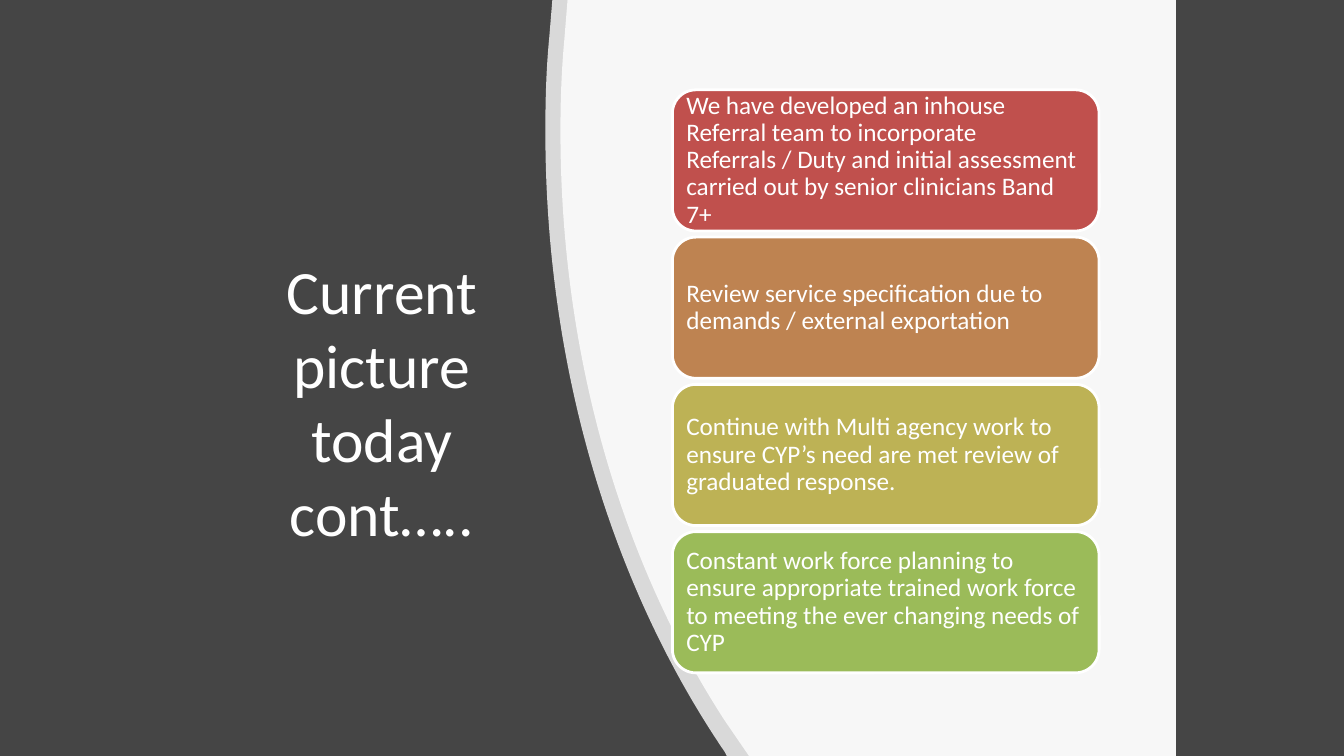
import dataclasses

import pptx
import pptx.dml.color
import pptx.enum.shapes
import pptx.enum.text
import pptx.oxml
import pptx.oxml.ns
import pptx.util


@dataclasses.dataclass(frozen=True)
class Theme:
    """Colours, type sizes and line widths of the slide."""

    font: str = "Calibri"
    background: str = "454545"
    white: str = "FFFFFF"
    panel_opacity: int = 80
    title_size: int = 44
    card_size: int = 18
    outline: int = 2


THEME = Theme()
WIDTH = pptx.util.Emu(12192000)
HEIGHT = pptx.util.Inches(7.5)
PANEL_RIGHT = 87.5

TITLE = "Current picture today cont….."
TITLE_BOX = (17.4, 20.4, 22.05, 65.33)

CARD_LEFT, CARD_TOP = 50.03, 11.88
CARD_WIDTH, CARD_HEIGHT, CARD_PITCH = 31.75, 18.68, 19.48
CARDS = [
    ("C0504D", "We have developed an inhouse Referral team to incorporate Referrals / Duty "
               "and initial assessment carried out by senior clinicians Band 7+"),
    ("BE8351", "Review service specification due to demands / external exportation"),
    ("BDB255", "Continue with Multi agency work to ensure CYP’s need are met review of "
               "graduated response."),
    ("9BBB59", "Constant work force planning to ensure appropriate trained work force to "
               "meeting the ever changing needs of CYP"),
]

OUTER_EDGE = {
    "top": 41.1,
    "bottom": 54.08,
    "start": (53.93, 99.47),
    "curves": [
        [(45.6, 77.73), (40.58, 48.93), (40.58, 17.33)],
        [(40.58, 13.07), (40.65, 8.93), (40.88, 4.8)],
    ],
}
INNER_EDGE = {
    "top": 42.23,
    "bottom": 55.73,
    "start": (53.93, 95.33),
    "curves": [
        [(46.28, 74.4), (41.7, 47.2), (41.7, 17.33)],
        [(41.7, 13.2), (41.78, 9.2), (42, 5.07)],
    ],
}


def across(percent):
    """Return a share of the slide width as a length."""
    return pptx.util.Emu(round(WIDTH * percent / 100))


def down(percent):
    """Return a share of the slide height as a length."""
    return pptx.util.Emu(round(HEIGHT * percent / 100))


def colour(value):
    """Return a colour object for a hexadecimal value."""
    return pptx.dml.color.RGBColor.from_string(value)


def write_text(frame, text, size, alignment):
    """Put one white, vertically centred paragraph in a text frame."""
    frame.text = text
    frame.word_wrap = True
    frame.auto_size = pptx.enum.text.MSO_AUTO_SIZE.NONE
    frame.vertical_anchor = pptx.enum.text.MSO_ANCHOR.MIDDLE
    para = frame.paragraphs[0]
    para.alignment = alignment
    para.font.name = THEME.font
    para.font.size = pptx.util.Pt(size)
    para.font.color.rgb = colour(THEME.white)
    return para


def add_title(page):
    """Place and format the title placeholder."""
    title = page.shapes.title
    left, top, width, height = TITLE_BOX
    title.left, title.top = across(left), down(top)
    title.width, title.height = across(width), down(height)
    write_text(title.text_frame, TITLE, THEME.title_size, pptx.enum.text.PP_ALIGN.CENTER)


def bend_lines(panel, first, count):
    """Turn each three straight lines from the first one on into a cubic curve."""
    lines = panel._element.findall(".//" + pptx.oxml.ns.qn("a:lnTo"))
    for index in range(first, first + 3 * count, 3):
        curve = pptx.oxml.parse_xml(f'<a:cubicBezTo {pptx.oxml.ns.nsdecls("a")}/>')
        lines[index].addprevious(curve)
        for line in lines[index:index + 3]:
            curve.append(line[0])
            line.getparent().remove(line)


def add_panel(page, edge):
    """Add a translucent white panel with a curved left edge."""
    corners = [(PANEL_RIGHT, 0), (PANEL_RIGHT, 100), (edge["bottom"], 100), edge["start"]]
    controls = [point for curve in edge["curves"] for point in curve]
    builder = page.shapes.build_freeform(across(edge["top"]), 0)
    builder.add_line_segments([(across(x), down(y)) for x, y in corners + controls], close=True)
    panel = builder.convert_to_shape()
    bend_lines(panel, len(corners), len(edge["curves"]))
    panel.shadow.inherit = False
    panel.line.fill.background()
    panel.fill.solid()
    panel.fill.fore_color.rgb = colour(THEME.white)
    tint = panel._element.spPr.find(".//" + pptx.oxml.ns.qn("a:srgbClr"))
    tint.append(pptx.oxml.parse_xml(f'<a:alpha {pptx.oxml.ns.nsdecls("a")} '
                                    f'val="{THEME.panel_opacity * 1000}"/>'))


def add_card(page, row, fill, text):
    """Add one rounded card of the column."""
    card = page.shapes.add_shape(
        pptx.enum.shapes.MSO_SHAPE.ROUNDED_RECTANGLE,
        across(CARD_LEFT), down(CARD_TOP + row * CARD_PITCH),
        across(CARD_WIDTH), down(CARD_HEIGHT))
    card.shadow.inherit = False
    card.fill.solid()
    card.fill.fore_color.rgb = colour(fill)
    card.line.color.rgb = colour(THEME.white)
    card.line.width = pptx.util.Pt(THEME.outline)
    frame = card.text_frame
    inset = pptx.util.Inches(0.07)
    frame.margin_left = frame.margin_right = inset
    frame.margin_top = frame.margin_bottom = inset
    para = write_text(frame, text, THEME.card_size, pptx.enum.text.PP_ALIGN.LEFT)
    para.line_spacing = 0.9


def main():
    """Build the slide and save it."""
    deck = pptx.Presentation()
    deck.slide_width, deck.slide_height = WIDTH, HEIGHT
    page = deck.slides.add_slide(deck.slide_layouts.get_by_name("Title Only"))
    page.background.fill.solid()
    page.background.fill.fore_color.rgb = colour(THEME.background)
    add_title(page)
    for edge in (OUTER_EDGE, INNER_EDGE):
        add_panel(page, edge)
    for row, (fill, text) in enumerate(CARDS):
        add_card(page, row, fill, text)
    deck.save("out.pptx")


if __name__ == "__main__":
    main()
